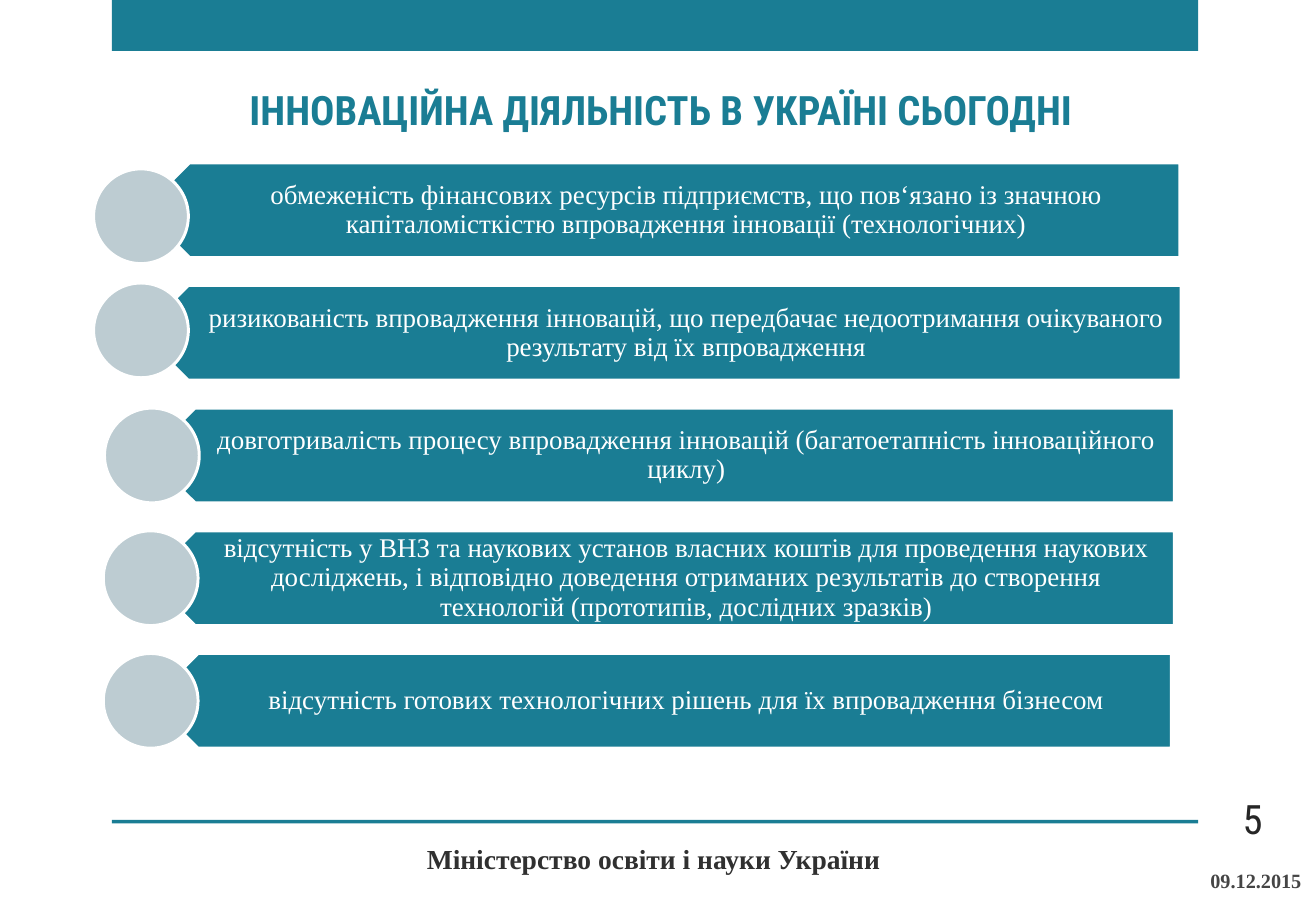
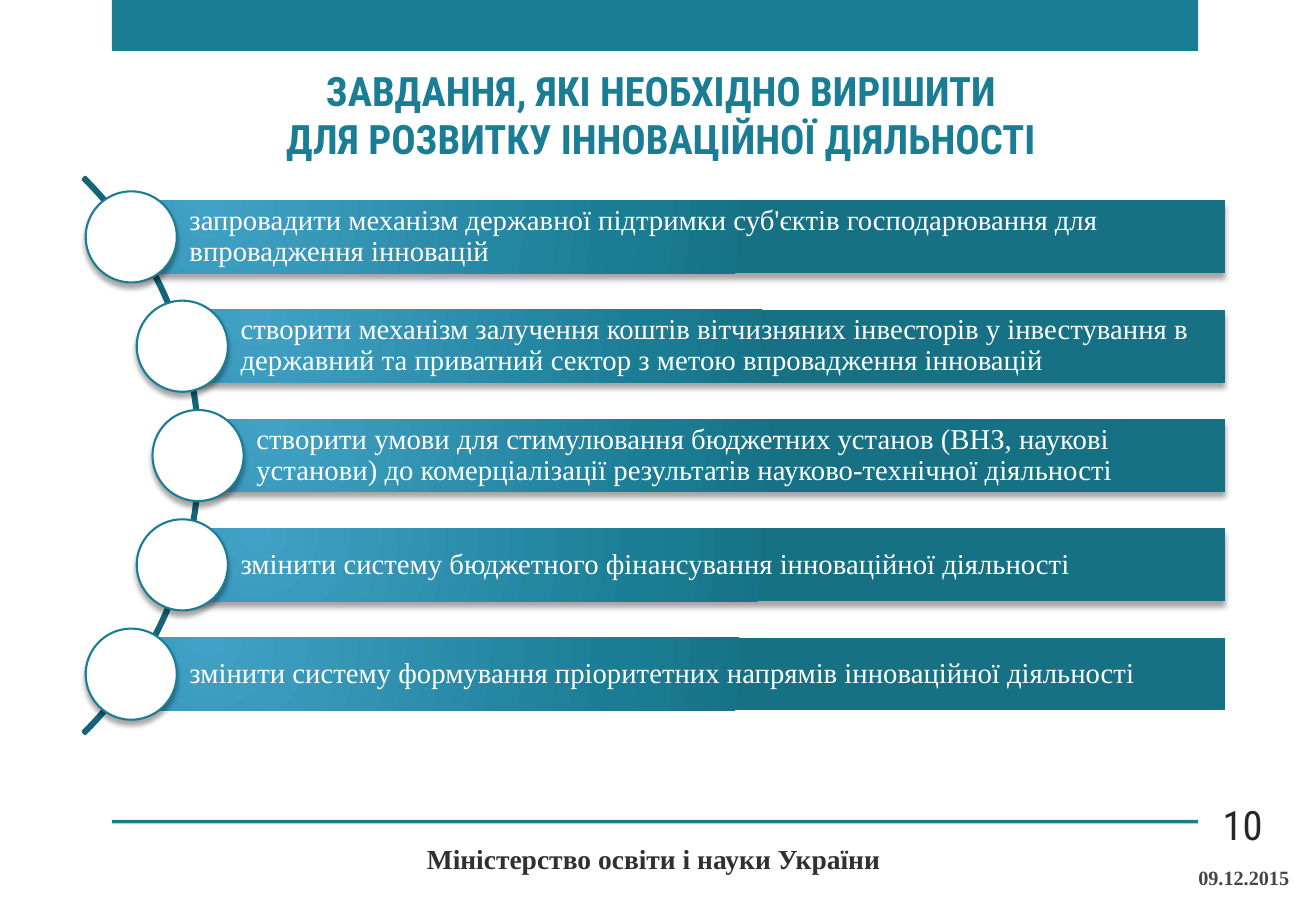
import math

import lxml.etree
import pptx
import pptx.dml.color
import pptx.enum.shapes
import pptx.enum.text
import pptx.oxml
import pptx.oxml.ns
import pptx.util

RGB = pptx.dml.color.RGBColor
KIND = pptx.enum.shapes.MSO_SHAPE
ALIGN = pptx.enum.text.PP_ALIGN
ANCHOR = pptx.enum.text.MSO_ANCHOR
Pt = pptx.util.Pt
qn = pptx.oxml.ns.qn

TEAL = RGB(0x1A, 0x7D, 0x94)
DEEP = RGB(0x15, 0x64, 0x77)
SKY = RGB(0x41, 0xA1, 0xC6)
DARK = RGB(0x17, 0x71, 0x85)
MIST = RGB(0xBD, 0xCC, 0xD2)
WHITE = RGB(0xFF, 0xFF, 0xFF)
BLACK = RGB(0, 0, 0)
INK = RGB(0x26, 0x26, 0x26)
COAL = RGB(0x30, 0x30, 0x30)
GRAY = RGB(0x45, 0x45, 0x45)

HEAD = "Roboto Condensed"
BODY = "Times New Roman"
SCALE = 9144
WIDE, HIGH = 1083, 750

LIMITS = [
    (854, 77, 5, "обмеженість фінансових ресурсів підприємств, що пов‘язано із значною "
                 "капіталомісткістю впровадження інновації (технологічних)"),
    (856, 77, -2, "ризикованість впровадження інновацій, що передбачає недоотримання "
                  "очікуваного результату від їх впровадження"),
    (845, 86, 0, "довготривалість процесу впровадження інновацій (багатоетапність "
                 "інноваційного циклу)"),
    (845, 85, 0, "відсутність у ВНЗ та наукових установ власних коштів для проведення "
                 "наукових досліджень, і відповідно доведення отриманих результатів до "
                 "створення технологій (прототипів, дослідних зразків)"),
    (840, 85, 0, "відсутність готових технологічних рішень для їх впровадження бізнесом"),
]
TASKS = [
    "запровадити механізм державної підтримки суб'єктів господарювання для "
    "впровадження інновацій",
    "створити механізм залучення коштів вітчизняних інвесторів у інвестування в "
    "державний та приватний сектор з метою впровадження інновацій",
    "створити умови для стимулювання бюджетних установ (ВНЗ, наукові установи) до "
    "комерціалізації результатів науково-технічної діяльності",
    "змінити систему бюджетного фінансування інноваційної діяльності",
    "змінити систему формування пріоритетних напрямів інноваційної діяльності",
]


def px(*sizes):
    """Turn px lengths into EMU."""
    return [pptx.util.Emu(round(size * SCALE)) for size in sizes]


def write(frame, text, size, color, font=BODY, bold=False, align=ALIGN.CENTER,
          anchor=ANCHOR.MIDDLE, inset=(10, 5, 10, 5), space=1.0):
    """Fill a text frame with evenly formatted text."""
    frame.text = text
    frame.word_wrap = True
    frame.auto_size = pptx.enum.text.MSO_AUTO_SIZE.NONE
    frame.vertical_anchor = anchor
    (frame.margin_left, frame.margin_top,
     frame.margin_right, frame.margin_bottom) = px(*inset)
    for para in frame.paragraphs:
        para.alignment = align
        para.line_spacing = space
        for run in para.runs:
            run.font.name = font
            run.font.size = Pt(size)
            run.font.bold = bold
            run.font.color.rgb = color


def label(slide, box, text, size, color, **style):
    """Add a text box."""
    note = slide.shapes.add_textbox(*px(*box))
    write(note.text_frame, text, size, color, **style)


def draw(slide, kind, box, fill=None, line=None, width=1.75):
    """Add a flat preset shape."""
    shape = slide.shapes.add_shape(kind, *px(*box))
    shape.shadow.inherit = False
    if fill is None:
        shape.fill.background()
    else:
        shape.fill.solid()
        shape.fill.fore_color.rgb = fill
    if line is None:
        shape.line.fill.background()
    else:
        shape.line.color.rgb = line
        shape.line.width = Pt(width)
    return shape


def node(tag, home=None, **attrs):
    """Make a drawing element, inside home if given."""
    item = pptx.oxml.parse_xml(f"<a:{tag} {pptx.oxml.ns.nsdecls('a')}/>")
    for key, value in attrs.items():
        item.set(key, str(value))
    if home is not None:
        home.append(item)
    return item


def shade(shape):
    """Give a shape a soft shadow below it."""
    home = shape._element.spPr.find(qn("a:effectLst"))
    cast = node("outerShdw", home, blurRad=Pt(3), dist=Pt(3), dir=5400000,
                algn="ctr", rotWithShape=0)
    node("alpha", node("srgbClr", cast, val=BLACK), val=35000)


def glow(shape):
    """Replace an empty fill with a round gradient."""
    grad = node("gradFill", rotWithShape=1)
    stops = node("gsLst", grad)
    for place, color in ((0, SKY), (76, TEAL), (100, DARK)):
        node("srgbClr", node("gs", stops, pos=place * 1000), val=color)
    node("fillToRect", node("path", grad, path="circle"),
         l=15000, t=15000, r=100000, b=100000)
    props = shape._element.spPr
    props.replace(props.find(qn("a:noFill")), grad)


def start(deck, title, box, page, page_top, date_at):
    """Add a slide with its bands, title and footer."""
    slide = deck.slides.add_slide(deck.slide_layouts[5])
    for top, height in ((0, 42), (675, 3)):
        draw(slide, KIND.RECTANGLE, (92, top, 894, height), TEAL)
    head = slide.shapes.title
    head.left, head.top, head.width, head.height = px(*box)
    write(head.text_frame, title, 24, TEAL, font=HEAD, bold=True, anchor=ANCHOR.BOTTOM)
    label(slide, (132, 683, 812, 47), "Міністерство освіти і науки України",
          16.3, COAL, bold=True)
    label(slide, (*date_at, 253, 40), "09.12.2015", 12, GRAY, bold=True,
          align=ALIGN.RIGHT)
    label(slide, (959, page_top, 90, 40), page, 24, INK, font=HEAD, align=ALIGN.RIGHT)
    return slide


def limits(slide, mid, top, step, height):
    """Stack arrow bars about a middle line, each with a disc."""
    for row, (width, left, drop, text) in enumerate(LIMITS):
        y = top + row * step
        bar = draw(slide, KIND.PENTAGON, (mid - width / 2, y, width, height), TEAL, WHITE)
        bar._element.spPr.find(qn("a:xfrm")).set("flipH", "1")
        write(bar.text_frame, text, 16, WHITE, inset=(34, 7, 12, 7), space=0.9)
        draw(slide, KIND.OVAL, (left, y + drop, height, height), MIST, WHITE)


def tasks(slide, left, top, size, right):
    """Set task bars and discs along an arc."""
    arc = draw(slide, KIND.BLOCK_ARC, (left, top, size, size), line=DEEP)
    for spot, value in enumerate((189, 27, 0.004)):
        arc.adjustments[spot] = value
    step, height, disc = 90, 60, 75
    half = size / 2
    for row, text in enumerate(TASKS):
        rise = (row - len(TASKS) // 2) * step
        x = round(left + half + math.sqrt((half - 2) ** 2 - rise ** 2))
        y = top + half + rise
        bar = draw(slide, KIND.RECTANGLE, (x, y - height / 2, right - x, height))
        glow(bar)
        shade(bar)
        write(bar.text_frame, text, 17, WHITE, align=ALIGN.LEFT,
              inset=(48, 5, 5, 5), space=0.9)
        shade(draw(slide, KIND.OVAL, (x - disc / 2, y - disc / 2, disc, disc),
                   WHITE, TEAL, 1.25))


def main():
    """Build and save the deck."""
    deck = pptx.Presentation()
    deck.slide_width, deck.slide_height = px(WIDE, HIGH)
    slide = start(deck, "ІННОВАЦІЙНА ДІЯЛЬНІСТЬ В УКРАЇНІ СЬОГОДНІ",
                  (61, 53, 966, 62), "5", 654, (828, 705))
    limits(slide, 544, 134, 101, 78)
    slide = start(deck, "ЗАВДАННЯ, ЯКІ НЕОБХІДНО ВИРІШИТИ\n"
                  "ДЛЯ РОЗВИТКУ ІННОВАЦІЙНОЇ ДІЯЛЬНОСТІ",
                  (61, 61, 966, 78), "10", 659, (818, 702))
    tasks(slide, -483, 51, 648, 1008)
    deck.save("out.pptx")


if __name__ == "__main__":
    main()
